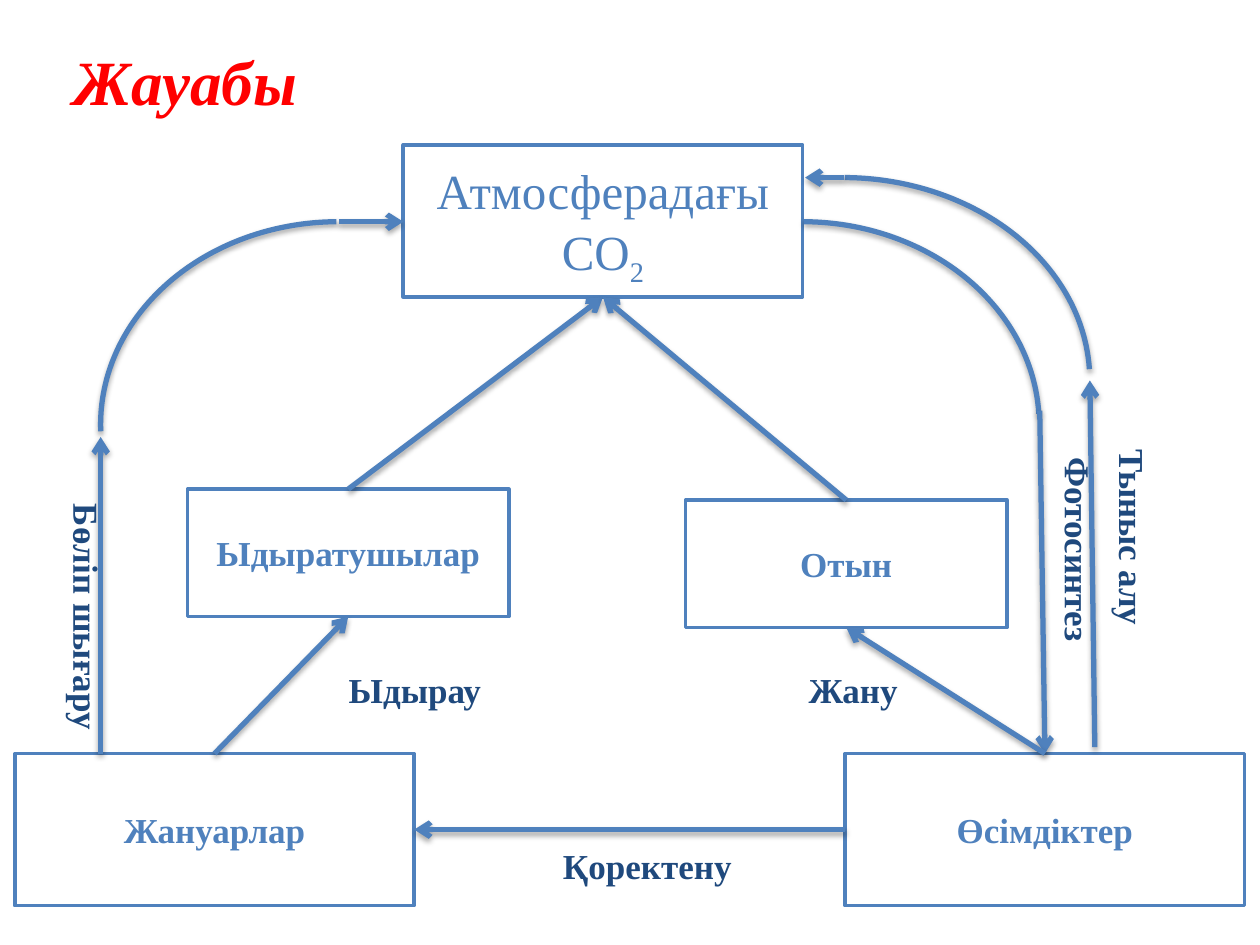
from pptx import Presentation
from pptx import util as u
from pptx.dml import color
from pptx.enum import shapes, text
from pptx.oxml import ns, parse_xml

INK = {"blue": "4F81BD", "navy": "1F497D", "red": "FF0000", "white": "FFFFFF"}
FONT = "Times New Roman"
SHADE = (
    f'<a:effectLst {ns.nsdecls("a")}><a:outerShdw blurRad="40000" dist="23000" '
    'dir="5400000" rotWithShape="0"><a:srgbClr val="000000">'
    '<a:alpha val="35000"/></a:srgbClr></a:outerShdw></a:effectLst>'
)
TAIL = f'<a:tailEnd {ns.nsdecls("a")} type="arrow"/>'


def rgb(name):
    """Return a named colour."""
    return color.RGBColor.from_string(INK[name])


def cm(*nums):
    """Turn numbers into lengths."""
    return [u.Cm(n) for n in nums]


def write(para, words, size, ink, bold=True, slant=False):
    """Add one run and return it."""
    run = para.add_run()
    run.text = words
    font = run.font
    font.name, font.size = FONT, u.Pt(size)
    font.bold, font.italic = bold, slant
    font.color.rgb = rgb(ink)
    return run


def stroke(shape, width):
    """Give a shape a blue line."""
    shape.line.color.rgb = rgb("blue")
    shape.line.width = u.Pt(width)


def node(slide, box):
    """Draw an empty node and return its centred paragraph."""
    shape = slide.shapes.add_shape(shapes.MSO_SHAPE.RECTANGLE, *cm(*box))
    shape.shadow.inherit = False
    shape.fill.solid()
    shape.fill.fore_color.rgb = rgb("white")
    stroke(shape, 2)
    frame = shape.text_frame
    frame.word_wrap = True
    frame.vertical_anchor = text.MSO_ANCHOR.MIDDLE
    para = frame.paragraphs[0]
    para.alignment = text.PP_ALIGN.CENTER
    return para


def label(slide, box, words, size=20, ink="navy", slant=False, turn=False):
    """Place a bold label, turned down the page if asked."""
    frame = slide.shapes.add_textbox(*cm(*box)).text_frame
    frame.word_wrap = False
    frame.auto_size = text.MSO_AUTO_SIZE.SHAPE_TO_FIT_TEXT
    if turn:
        frame._txBody.bodyPr.set("vert", "vert")
    write(frame.paragraphs[0], words, size, ink, slant=slant)


def arrow(slide, start, end):
    """Draw a shaded arrow between two points."""
    line = slide.shapes.add_connector(
        shapes.MSO_CONNECTOR.STRAIGHT, *cm(*start, *end))
    stroke(line, 3)
    line.line._get_or_add_ln().append(parse_xml(TAIL))
    line._element.spPr.append(parse_xml(SHADE))


def arc(slide, box, stop, flip=False):
    """Draw a shaded arc from the top of its box."""
    shape = slide.shapes.add_shape(shapes.MSO_SHAPE.ARC, *cm(*box))
    shape.adjustments[0] = 162.306
    shape.adjustments[1] = stop
    shape.fill.background()
    stroke(shape, 3)
    props = shape._element.spPr
    props.append(parse_xml(SHADE))
    if flip:
        props.find(ns.qn("a:xfrm")).set("flipH", "1")


def edge(box, fx, fy):
    """Return the point at given fractions of a box."""
    x, y, w, h = box
    return x + w * fx, y + h * fy


def cycle(slide, box):
    """Draw the carbon cycle within a box."""
    left, top, wide, high = box

    def at(x, y, *size):
        """Shift a point or box into place."""
        return (left + x, top + y, *size)

    big, small = (8.05, 3.07), (6.48, 2.57)
    low = high - big[1]
    air = at(7.83, 0, *big)
    plant = at(wide - big[0], low, *big)
    beast = at(0, low, *big)
    fuel = at(13.52, 7.16, *small)
    rot = at(3.48, 6.94, *small)

    para = node(slide, air)
    for words, size in (("Атмосферадағы", 28), (" ", 32), ("СО", 28)):
        write(para, words, size, "blue", False)
    sub = write(para, "2", 28, "blue", False)
    sub._r.get_or_add_rPr().set("baseline", "-25000")
    for spot, words in ((plant, "Өсімдіктер"), (beast, "Жануарлар"),
                        (fuel, "Отын"), (rot, "Ыдыратушылар")):
        write(node(slide, spot), words, 20, "blue")

    arc(slide, at(1.73, 1.55, 9.58, 8.18), 0.968, True)
    arc(slide, at(11.1, 1.55, 9.55, 8.18), 214.428)
    arc(slide, at(11.71, 0.66, 9.96, 8.18), 214.428)

    for start, end in (
        (at(1.73, low), at(1.73, 5.89)),
        (at(6.53, 1.55), at(7.83, 1.55)),
        (at(20.66, 5.36), edge(plant, 0.5, 0)),
        (edge(plant, 0.5, 0), edge(fuel, 0.5, 1)),
        (edge(plant, 0, 0.5), edge(beast, 1, 0.5)),
        (edge(beast, 0.5, 0), edge(rot, 0.5, 1)),
        (edge(rot, 0.5, 0), edge(air, 0.5, 1)),
        (edge(fuel, 0.5, 0), edge(air, 0.5, 1)),
        (at(16.72, 0.66), at(15.93, 0.66)),
        (at(21.77, 12.14), at(21.67, 4.75)),
    ):
        arrow(slide, start, end)

    for x, y, tall, words in ((20.63, 6.05, 3.99, "Фотосинтез"),
                              (21.72, 5.89, 3.84, "Тыныс алу"),
                              (0.64, 6.99, 4.85, "Бөліп шығару")):
        label(slide, at(x, y, 1.37, tall), words, turn=True)
    for x, y, span, words in ((15.75, 10.44, 2.31, "Жану"),
                              (10.8, 13.97, 3.94, "Қоректену"),
                              (6.48, 10.44, 3.2, "Ыдырау")):
        label(slide, at(x, y, span, 1.12), words)


def main():
    """Build and save the slide."""
    deck = Presentation()
    deck.slide_width, deck.slide_height = cm(25.4, 19.05)
    slide = deck.slides.add_slide(deck.slide_layouts[6])
    cycle(slide, (0.3, 2.92, 24.79, 15.34))
    label(slide, (1.24, 0.74, 5.05, 1.8), "Жауабы", 36, "red", slant=True)
    deck.save("out.pptx")


if __name__ == "__main__":
    main()
